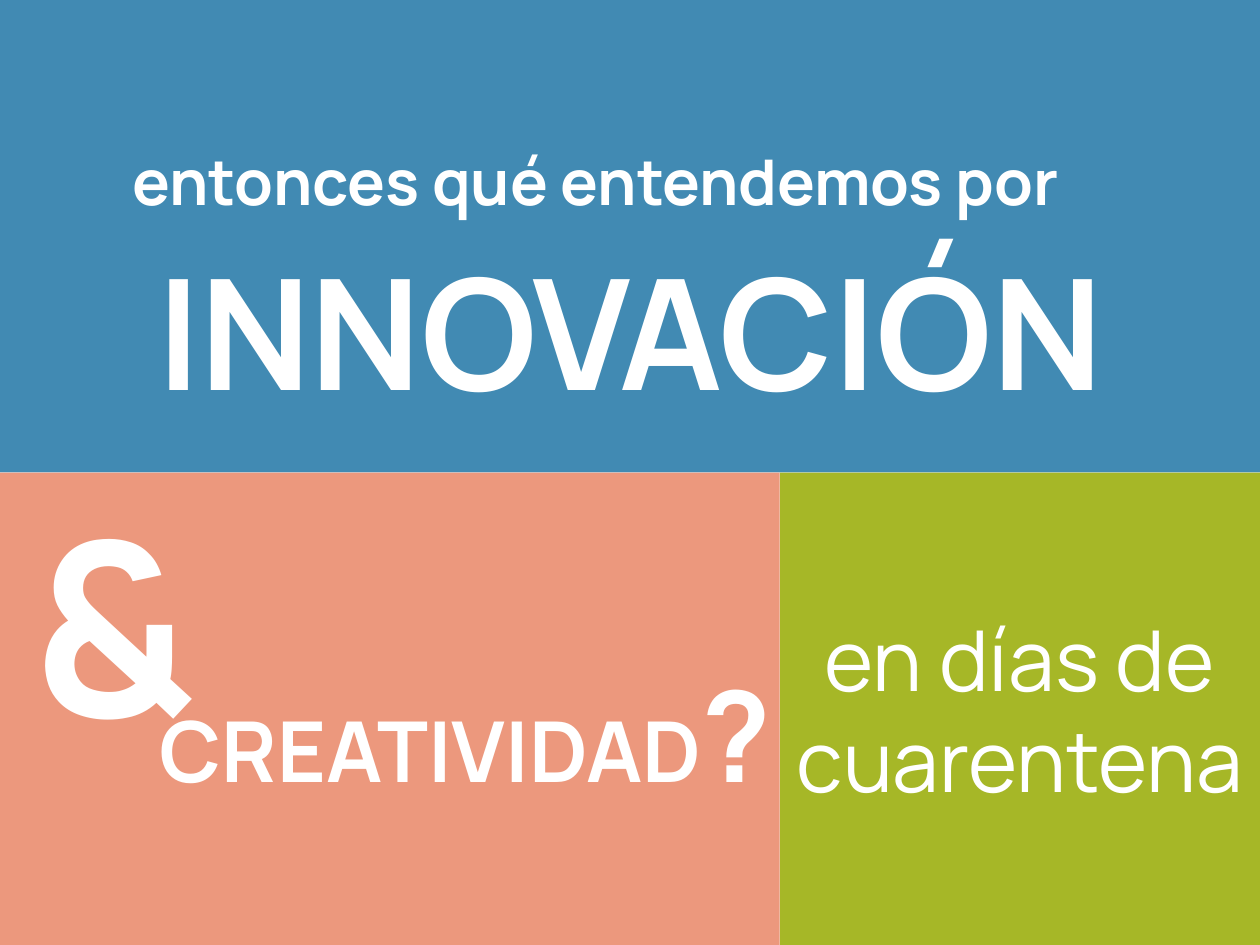
"""Build a three-panel title slide about innovation and creativity."""
from pptx import Presentation
from pptx.dml.color import RGBColor
from pptx.enum import shapes, text
from pptx.util import Cm, Pt

FONT = "Manrope"
WHITE = "FFFFFF"
WIDTH, HEIGHT = 25.4, 19.05


def colour(value):
    """Turn a hex string into a colour."""
    return RGBColor.from_string(value)


def style(font, size, bold=True):
    """Set the white slide font at a given size."""
    font.name = FONT
    font.size = Pt(size)
    font.bold = bold
    font.color.rgb = colour(WHITE)


def add_panel(slide, box, fill):
    """Draw a flat coloured panel and return its text frame."""
    panel = slide.shapes.add_shape(shapes.MSO_SHAPE.RECTANGLE, *map(Cm, box))
    panel.shadow.inherit = False
    panel.fill.solid()
    panel.fill.fore_color.rgb = colour(fill)
    panel.line.fill.background()
    return panel.text_frame


def add_label(slide, box, runs):
    """Place one unwrapped line made of (wording, size) runs."""
    frame = slide.shapes.add_textbox(*map(Cm, box)).text_frame
    frame.word_wrap = False
    frame.auto_size = text.MSO_AUTO_SIZE.SHAPE_TO_FIT_TEXT
    for wording, size in runs:
        run = frame.paragraphs[0].add_run()
        run.text = wording
        style(run.font, size)


def add_innovation(slide, box):
    """Fill the top region with the question and its main word."""
    frame = add_panel(slide, box, "418AB3")
    frame.vertical_anchor = text.MSO_ANCHOR.BOTTOM
    frame.margin_left = Cm(2.67)
    frame.margin_bottom = Cm(1.04)
    question, topic = frame.paragraphs[0], frame.add_paragraph()
    question.text = "entonces qué entendemos por"
    question.alignment = text.PP_ALIGN.LEFT
    question.space_after = Pt(10.4)
    style(question.font, 36)
    frame.margin_right = frame.margin_left
    topic.text = "INNOVACIÓN"
    topic.alignment = text.PP_ALIGN.CENTER
    style(topic.font, 88)


def add_creativity(slide, box):
    """Fill the lower left region with the ampersand and second word."""
    left, top = box[:2]
    add_panel(slide, box, "EC987D")
    add_label(slide, (left + 0.43, top - 0.08, 4.04, 6.15), [("&", 138)])
    add_label(slide, (left + 2.97, top + 3.58, 12.9, 3.33),
              [("CREATIVIDAD", 48), ("?", 72)])


def add_quarantine(slide, box):
    """Fill the lower right region with the closing words."""
    frame = add_panel(slide, box, "A6B727")
    frame.word_wrap = True
    frame.vertical_anchor = text.MSO_ANCHOR.MIDDLE
    closing = frame.paragraphs[0]
    closing.text = "en días de cuarentena"
    closing.alignment = text.PP_ALIGN.CENTER
    style(closing.font, 48, bold=False)


def main():
    """Lay out the three regions and save the slide."""
    deck = Presentation()
    deck.slide_width, deck.slide_height = Cm(WIDTH), Cm(HEIGHT)
    slide = deck.slides.add_slide(deck.slide_layouts[6])
    half, split = HEIGHT / 2, 15.72
    add_innovation(slide, (0, 0, WIDTH, half))
    add_quarantine(slide, (split, half, WIDTH - split, half))
    add_creativity(slide, (0, half, split, half))
    deck.save("out.pptx")


if __name__ == "__main__":
    main()
